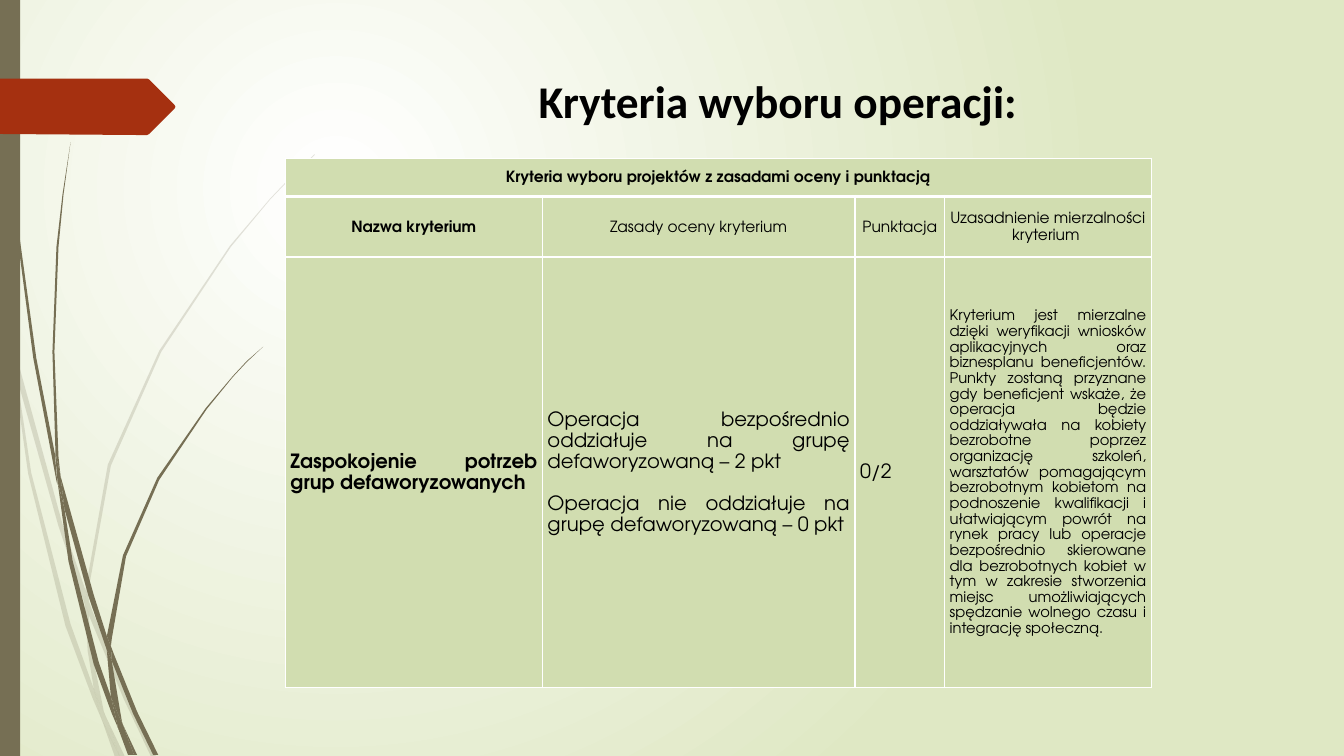
import pptx
import pptx.util
import pptx.oxml
import pptx.oxml.ns
import pptx.dml.color
import pptx.enum.shapes
import pptx.enum.text

Inches = pptx.util.Inches
Pt = pptx.util.Pt
RGBColor = pptx.dml.color.RGBColor
Align = pptx.enum.text.PP_ALIGN
Anchor = pptx.enum.text.MSO_ANCHOR

WHITE = RGBColor(0xFF, 0xFF, 0xFF)
BLACK = RGBColor(0x00, 0x00, 0x00)
PALE_GREEN = RGBColor(0xDF, 0xE8, 0xC4)
CELL_GREEN = RGBColor(0xD1, 0xDD, 0xB0)
OLIVE = RGBColor(0x76, 0x6F, 0x54)
RUST = RGBColor(0xA5, 0x30, 0x10)

TITLE_FONT = "Calibri"
TABLE_FONT = "TeX Gyre Adventor"
WIDTH, HEIGHT = 13.33, 7.5

FAINT_BLADES = [
    [(.11, 3.5), (.09, 3.22), (0, 2.82), (0, 2.99), (.1, 3.44)],
    [(.58, 5.22), (.84, 5.99), (.85, 5.86), (.62, 5.2), (.14, 3.45), (.17, 3.76)],
    [(.92, 6.07), (.88, 5.96), (.88, 6.1), (1.23, 6.94), (1.5, 7.51), (1.55, 7.51),
     (1.27, 6.92)],
    [(1.19, 7.51), (1.24, 7.51), (1.05, 7.11)],
    [(.93, 6.83), (.7, 6.19), (.31, 4.69), (.17, 3.76), (.11, 3.5), (.28, 4.7),
     (.65, 6.21), (.92, 6.93), (1.01, 7.14), (.99, 7.07)],
    [(.84, 5.99), (.87, 6.46), (.93, 6.83), (.96, 6.92), (1.05, 7.11), (1.03, 7.06),
     (.91, 6.46), (.88, 6.1), (.88, 6.08)],
    [(.88, 5.84), (1.1, 4.62), (1.6, 3.49), (2.29, 2.45), (2.68, 1.98), (2.9, 1.75),
     (3.12, 1.54), (3.12, 1.53), (2.89, 1.75), (2.68, 1.97), (2.28, 2.44),
     (1.58, 3.48), (1.07, 4.61), (.85, 5.84), (.85, 5.86), (.88, 5.96)],
    [(1.01, 7.14), (1.14, 7.51), (1.19, 7.51)],
    [(.88, 6.08), (.88, 6.1), (.88, 5.96), (.85, 5.86), (.84, 5.99)],
    [(.96, 6.92), (.93, 6.83), (.99, 7.07), (1.01, 7.14), (1.19, 7.51), (1.05, 7.11)],
]
DARK_BLADES = [
    [(.07, 1.1), (.17, 2.33), (.33, 3.55), (.56, 4.77), (.57, 4.81), (.55, 4.57),
     (.55, 4.53), (.36, 3.55), (.19, 2.32), (.08, 1.09), (.05, .48), (.04, 0),
     (.03, 0), (.04, .48)],
    [(.88, 5.92), (1.06, 6.45), (1.06, 6.33), (1.06, 6.31), (.93, 5.9), (.6, 4.72),
     (.64, 5.05)],
    [(1.13, 6.49), (1.1, 6.41), (1.11, 6.56), (1.32, 7.08), (1.52, 7.49), (1.57, 7.49),
     (1.36, 7.06)],
    [(1.1, 6.91), (.98, 6.57), (.72, 5.56), (.64, 5.05), (.57, 4.77), (.68, 5.57),
     (.93, 6.59), (1.11, 7.08), (1.17, 7.22), (1.16, 7.17)],
    [(.6, 4.72), (.58, 4.53), (.54, 3.49), (.58, 2.45), (.63, 1.93), (.7, 1.41),
     (.62, 1.93), (.56, 2.45), (.52, 3.49), (.55, 4.49)],
    [(1.33, 7.49), (1.36, 7.49), (1.22, 7.19)],
    [(.57, 4.77), (.64, 5.05), (.6, 4.72), (.55, 4.49), (.55, 4.53)],
    [(1.11, 6.33), (1.25, 5.52), (1.58, 4.76), (2.05, 4.06), (2.31, 3.74), (2.45, 3.59),
     (2.61, 3.44), (2.45, 3.58), (2.31, 3.73), (2.04, 4.05), (1.56, 4.74),
     (1.22, 5.51), (1.06, 6.31), (1.1, 6.41)],
    [(1.17, 7.22), (1.27, 7.49), (1.31, 7.49)],
    [(1.06, 6.45), (1.1, 6.91), (1.16, 7.06), (1.22, 7.19), (1.21, 7.16), (1.11, 6.56),
     (1.09, 6.51)],
    [(1.06, 6.45), (1.09, 6.51), (1.11, 6.56), (1.1, 6.41), (1.06, 6.31), (1.06, 6.33)],
    [(1.16, 7.06), (1.1, 6.91), (1.16, 7.17), (1.17, 7.22), (1.3, 7.49), (1.33, 7.49),
     (1.22, 7.19)],
]
POINTER = [(1.73, 1.08), (1.48, 1.33), (1.46, 1.34), (1.36, 1.34), (0, 1.33), (0, .78),
           (1.36, .78), (1.46, .78), (1.48, .79), (1.73, 1.04), (1.74, 1.06)]

COLUMNS = [2.55, 3.1, 0.89, 2.05]
ROWS = [0.38, 0.6, 4.27]
CAPTION = "Kryteria wyboru projektów z zasadami oceny i punktacją"
HEADINGS = ["Nazwa kryterium", "Zasady oceny kryterium", "Punktacja",
            "Uzasadnienie mierzalności kryterium "]
CRITERION = [
    (["Zaspokojenie potrzeb grup defaworyzowanych"], 14, Align.JUSTIFY),
    (["Operacja bezpośrednio oddziałuje na grupę defaworyzowaną – 2 pkt",
      "Operacja nie oddziałuje na grupę defaworyzowaną – 0 pkt"], 14, Align.JUSTIFY),
    (["0/2"], 14, Align.LEFT),
    (["Kryterium jest mierzalne dzięki weryfikacji wniosków aplikacyjnych oraz "
      "biznesplanu beneficjentów. Punkty zostaną przyznane gdy beneficjent wskaże, "
      "że operacja będzie oddziaływała na kobiety bezrobotne poprzez organizację "
      "szkoleń, warsztatów pomagającym bezrobotnym kobietom na podnoszenie "
      "kwalifikacji i ułatwiającym powrót na rynek pracy lub operacje bezpośrednio "
      "skierowane dla bezrobotnych kobiet w tym w zakresie stworzenia miejsc "
      "umożliwiających spędzanie wolnego czasu i integrację społeczną."],
     10.5, Align.JUSTIFY),
]


def paint_background(page):
    """Fill the page with a circular gradient from white to pale green."""
    fill = page.background.fill
    fill.gradient()
    for stop, color, position in zip(fill.gradient_stops, (WHITE, PALE_GREEN), (0, 1)):
        stop.color.rgb = color
        stop.position = position
    gradient = page.background._cSld.find(".//" + pptx.oxml.ns.qn("a:gradFill"))
    gradient.remove(gradient.find(pptx.oxml.ns.qn("a:lin")))
    gradient.append(pptx.oxml.parse_xml(
        f'<a:path {pptx.oxml.ns.nsdecls("a")} path="circle">'
        '<a:fillToRect l="50000" t="50000" r="100000" b="100000"/></a:path>'))


def paint(shape, color, opacity=100):
    """Give a shape a plain fill without line or shadow."""
    shape.shadow.inherit = False
    shape.fill.solid()
    shape.fill.fore_color.rgb = color
    shape.line.fill.background()
    if opacity < 100:
        tint = shape._element.spPr.find(".//" + pptx.oxml.ns.qn("a:srgbClr"))
        tint.append(pptx.oxml.parse_xml(
            f'<a:alpha {pptx.oxml.ns.nsdecls("a")} val="{opacity * 1000}"/>'))


def draw_outline(shapes, left, top, points, color, opacity=100):
    """Draw one closed outline at an offset."""
    outline = [(Inches(left + x), Inches(top + y)) for x, y in points]
    builder = shapes.build_freeform(*outline[0])
    builder.add_line_segments(outline[1:], close=True)
    paint(builder.convert_to_shape(), color, opacity)


def draw_margin(page, left, top, height):
    """Draw the grass, the side bar and the pointer at the left edge."""
    for blades, opacity in ((FAINT_BLADES, 20), (DARK_BLADES, 100)):
        grass = page.shapes.add_group_shape()
        for blade in blades:
            draw_outline(grass.shapes, left, top, blade, OLIVE, opacity)
    bar = page.shapes.add_shape(pptx.enum.shapes.MSO_SHAPE.RECTANGLE, Inches(left),
                                Inches(top), Inches(0.2), Inches(height))
    paint(bar, OLIVE)
    draw_outline(page.shapes, left, top, POINTER, RUST)


def write_title(page, left, top, width, height):
    """Place the title in its box."""
    title = page.shapes.title
    title.left, title.top = Inches(left), Inches(top)
    title.width, title.height = Inches(width), Inches(height)
    frame = title.text_frame
    frame.text = "Kryteria wyboru operacji:"
    frame.word_wrap = True
    frame.vertical_anchor = Anchor.TOP
    para = frame.paragraphs[0]
    para.add_line_break()
    para.alignment = Align.CENTER
    font = para.font
    font.name, font.size, font.bold = TITLE_FONT, Pt(32.4), True
    font.color.rgb = BLACK


def write_cell(cell, texts, size, alignment, bold):
    """Write one paragraph per text into a table cell."""
    cell.text = "\n".join(texts)
    for para in cell.text_frame.paragraphs:
        para.alignment = alignment
        para.line_spacing = 1.15
        para.space_before, para.space_after = Pt(5), Pt(10)
        font = para.font
        font.name, font.size, font.bold = TABLE_FONT, Pt(size), bold
        font.color.rgb = BLACK


def format_cell(cell, top_width, bottom_width):
    """Set margins, fill and white borders of a table cell."""
    cell.vertical_anchor = Anchor.MIDDLE
    cell.margin_left = cell.margin_right = Inches(0.05)
    cell.margin_top = cell.margin_bottom = 0
    cell.fill.solid()
    cell.fill.fore_color.rgb = CELL_GREEN
    properties = cell._tc.get_or_add_tcPr()
    sides = [("L", 1), ("R", 1), ("T", top_width), ("B", bottom_width)]
    for place, (side, width) in enumerate(sides):
        properties.insert(place, pptx.oxml.parse_xml(
            f'<a:ln{side} {pptx.oxml.ns.nsdecls("a")} w="{Pt(width)}">'
            f'<a:solidFill><a:srgbClr val="{WHITE}"/></a:solidFill></a:ln{side}>'))


def draw_criteria_table(page, left, top):
    """Draw the table of selection criteria."""
    table = page.shapes.add_table(
        len(ROWS), len(COLUMNS), Inches(left), Inches(top),
        Inches(sum(COLUMNS)), Inches(sum(ROWS))).table
    table.first_row = table.horz_banding = False
    for column, width in zip(table.columns, COLUMNS):
        column.width = Inches(width)
    for index, (row, height) in enumerate(zip(table.rows, ROWS)):
        row.height = Inches(height)
        for cell in row.cells:
            format_cell(cell, 3 if index == 1 else 1, 3 if index == 0 else 1)
    table.cell(0, 0).merge(table.cell(0, len(COLUMNS) - 1))
    write_cell(table.cell(0, 0), [CAPTION], 11, Align.CENTER, True)
    for index, heading in enumerate(HEADINGS):
        write_cell(table.cell(1, index), [heading], 11, Align.CENTER, index == 0)
    for index, (texts, size, alignment) in enumerate(CRITERION):
        write_cell(table.cell(2, index), texts, size, alignment, index == 0)


def main():
    """Build and save the deck."""
    deck = pptx.Presentation()
    deck.slide_width, deck.slide_height = Inches(WIDTH), Inches(HEIGHT)
    page = deck.slides.add_slide(deck.slide_layouts[5])
    paint_background(page)
    draw_margin(page, 0, 0, HEIGHT)
    write_title(page, 2.84, 0.68, 9.75, 0.88)
    draw_criteria_table(page, 2.83, 1.57)
    deck.save("out.pptx")


if __name__ == "__main__":
    main()
